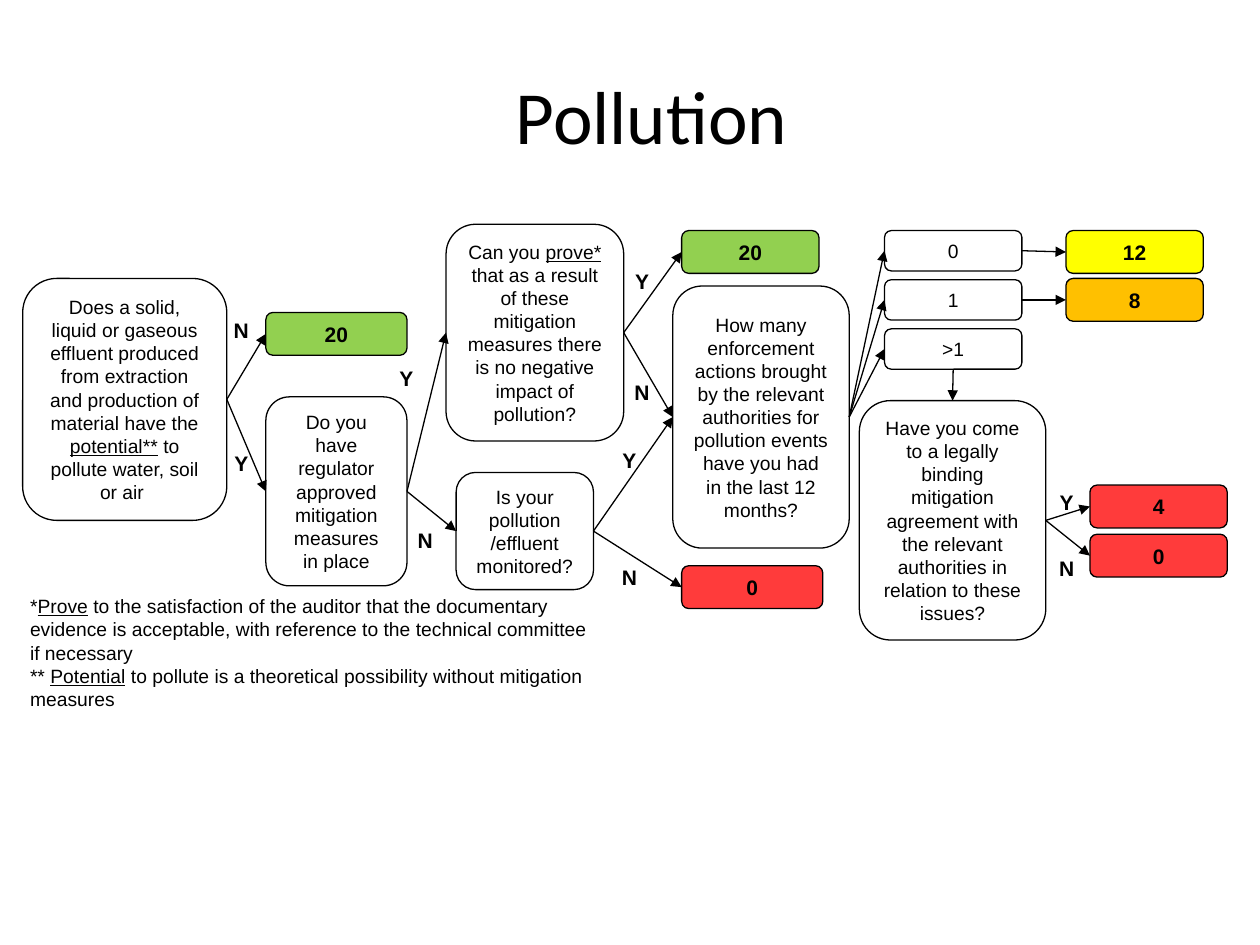
from dataclasses import dataclass

from lxml import etree
from pptx import Presentation
from pptx.dml.color import RGBColor
from pptx.enum.shapes import MSO_CONNECTOR, MSO_SHAPE
from pptx.enum.text import MSO_ANCHOR, MSO_AUTO_SIZE, PP_ALIGN
from pptx.oxml.ns import qn
from pptx.util import Inches, Pt

ROUNDED = MSO_SHAPE.FLOWCHART_ALTERNATE_PROCESS
STRAIGHT = MSO_CONNECTOR.STRAIGHT
CENTER, LEFT_ALIGN = PP_ALIGN.CENTER, PP_ALIGN.LEFT
MIDDLE, TOP_ANCHOR = MSO_ANCHOR.MIDDLE, MSO_ANCHOR.TOP
NO_AUTOSIZE = MSO_AUTO_SIZE.NONE
TOP, LEFT, BOTTOM, RIGHT = range(4)
BLACK, WHITE = "000000", "FFFFFF"
GREEN, YELLOW, ORANGE, RED = "92D050", "FFFF00", "FFC000", "FF3B3B"


@dataclass(frozen=True)
class Step:
    key: str
    text: str
    left: float
    top: float
    width: float
    height: float
    fill: str = WHITE
    size: float = 11
    bold: bool = False


@dataclass(frozen=True)
class Answer:
    text: str
    left: float
    top: float


@dataclass(frozen=True)
class Arrow:
    start: str
    end: str
    start_side: int = RIGHT
    end_side: int = LEFT


def score(key: str, points: str, left: float, top: float, fill: str, width: float = 1.09) -> Step:
    return Step(key, points, left, top, width, 0.34, fill, 12, True)


STEPS = [
    Step("potential", "Does a solid, liquid or gaseous effluent produced from extraction and "
         "production of material have the _potential**_ to pollute water, soil or air ",
         0.18, 2.21, 1.62, 1.92),
    Step("regulator", "Do you have regulator approved mitigation measures in place",
         2.11, 3.15, 1.12, 1.5),
    score("no effluent", "20", 2.11, 2.48, GREEN, 1.12),
    Step("prove", "Can you _prove*_ that as a result of these mitigation measures there is no "
         "negative impact of pollution?", 3.54, 1.78, 1.41, 1.72),
    Step("monitored", "Is your pollution /effluent monitored?", 3.62, 3.75, 1.09, 0.93),
    score("proven", "20", 5.41, 1.83, GREEN),
    score("unmonitored", "0", 5.41, 4.49, RED, 1.12),
    Step("enforcement", "How many enforcement actions brought by the relevant authorities for "
         "pollution events have you had in the last 12 months?", 5.34, 2.27, 1.4, 2.08),
    *(Step(count, count, 7.02, 1.83 + 0.39 * row, 1.09, 0.32)
      for row, count in enumerate(["0", "1", ">1"])),
    score("no actions", "12", 8.46, 1.83, YELLOW),
    score("one action", "8", 8.46, 2.21, ORANGE),
    score("agreement", "4", 8.65, 3.85, RED),
    score("no agreement", "0", 8.65, 4.24, RED),
    Step("binding", "Have you come to a legally binding mitigation agreement with the relevant "
         "authorities in relation to these issues?", 6.82, 3.18, 1.48, 1.9),
]

ARROWS = [
    Arrow("potential", "regulator"),
    Arrow("potential", "no effluent"),
    Arrow("regulator", "prove"),
    Arrow("regulator", "monitored"),
    Arrow("prove", "enforcement"),
    Arrow("prove", "proven"),
    Arrow("monitored", "unmonitored"),
    Arrow("monitored", "enforcement"),
    Arrow("enforcement", "0"),
    Arrow("enforcement", "1"),
    Arrow("enforcement", ">1"),
    Arrow("0", "no actions"),
    Arrow("1", "one action"),
    Arrow(">1", "binding", BOTTOM, TOP),
    Arrow("binding", "agreement"),
    Arrow("binding", "no agreement"),
]

ANSWERS = [
    Answer("N", 1.72, 2.47), Answer("Y", 1.72, 3.53),
    Answer("Y", 3.03, 2.85), Answer("N", 3.18, 4.14),
    Answer("Y", 4.9, 2.08), Answer("N", 4.9, 2.96),
    Answer("Y", 4.8, 3.5), Answer("N", 4.8, 4.43),
    Answer("Y", 8.27, 3.84), Answer("N", 8.27, 4.36),
]

FOOTNOTES = [
    "*_Prove_ to the satisfaction of the auditor that the documentary evidence is acceptable, "
    "with reference to the technical committee if necessary",
    "** _Potential_ to pollute is a theoretical possibility without mitigation measures",
]


def color(value: str) -> RGBColor:
    return RGBColor.from_string(value)


def write(frame, lines: list[str], size: float, bold: bool = False, align=CENTER,
          anchor=MIDDLE, font: str = "Arial") -> None:
    frame.word_wrap = True
    frame.auto_size = NO_AUTOSIZE
    frame.vertical_anchor = anchor
    for index, line in enumerate(lines):
        paragraph = frame.add_paragraph() if index else frame.paragraphs[0]
        paragraph.alignment = align
        for part, words in enumerate(line.split("_")):
            if words:
                run = paragraph.add_run()
                run.text = words
                run.font.name = font
                run.font.size = Pt(size)
                run.font.bold = bold
                run.font.underline = part % 2 == 1
                run.font.color.rgb = color(BLACK)


def draw_step(slide, step: Step):
    box = slide.shapes.add_shape(ROUNDED, Inches(step.left), Inches(step.top),
                                 Inches(step.width), Inches(step.height))
    box.shadow.inherit = False
    box.fill.solid()
    box.fill.fore_color.rgb = color(step.fill)
    box.line.color.rgb = color(BLACK)
    box.line.width = Pt(0.75)
    write(box.text_frame, [step.text], step.size, step.bold)
    return box


def draw_arrow(slide, arrow: Arrow, boxes: dict) -> None:
    connector = slide.shapes.add_connector(STRAIGHT, 0, 0, 0, 0)
    connector.begin_connect(boxes[arrow.start], arrow.start_side)
    connector.end_connect(boxes[arrow.end], arrow.end_side)
    connector.line.color.rgb = color(BLACK)
    connector.line.width = Pt(0.75)
    etree.SubElement(connector.line._get_or_add_ln(), qn("a:tailEnd"), type="triangle")
    etree.SubElement(connector._element.spPr, qn("a:effectLst"))


def draw_answer(slide, answer: Answer) -> None:
    label = slide.shapes.add_textbox(Inches(answer.left), Inches(answer.top),
                                     Inches(0.39), Inches(0.3))
    write(label.text_frame, [answer.text], 12, bold=True, anchor=TOP_ANCHOR)


def main() -> None:
    deck = Presentation()
    deck.slide_width, deck.slide_height = Inches(10), Inches(7.5)
    slide = deck.slides.add_slide(deck.slide_layouts[5])

    title = slide.shapes.title
    title.left, title.top = Inches(0.67), Inches(0.47)
    title.width, title.height = Inches(9), Inches(0.87)
    write(title.text_frame, ["Pollution"], 42.9, font="Calibri")

    boxes = {step.key: draw_step(slide, step) for step in STEPS}
    for arrow in ARROWS:
        draw_arrow(slide, arrow, boxes)
    for answer in ANSWERS:
        draw_answer(slide, answer)

    footnote = slide.shapes.add_textbox(Inches(0.14), Inches(4.67), Inches(4.66), Inches(1.03))
    write(footnote.text_frame, FOOTNOTES, 11, align=LEFT_ALIGN, anchor=TOP_ANCHOR)

    deck.save("out.pptx")


if __name__ == "__main__":
    main()
